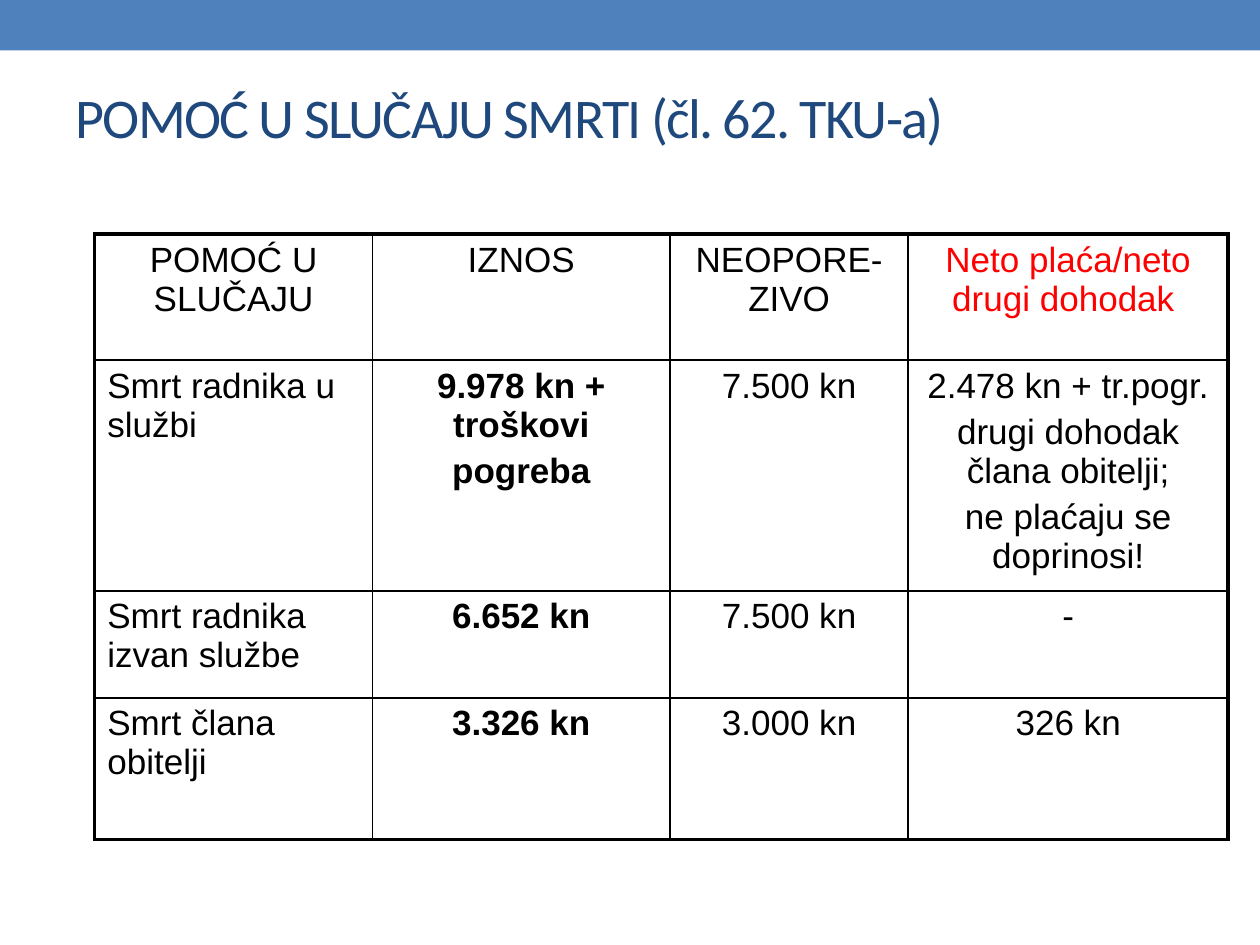
from dataclasses import dataclass

from lxml import etree
from pptx import Presentation
from pptx import util as u
from pptx.dml.color import RGBColor
from pptx.enum import shapes, text
from pptx.oxml import ns


@dataclass(frozen=True)
class Theme:
    band: str = "4F81BD"
    title: str = "1F497D"
    ink: str = "000000"
    accent: str = "FF0000"
    title_font: str = "Calibri"
    table_font: str = "Arial"
    title_size: float = 32
    table_size: float = 20
    space_before: float = 4
    outer_line: float = 2.25
    inner_line: float = 1


class SlideBuilder:
    def __init__(self, page, theme):
        self.page = page
        self.theme = theme

    def band(self, left, top, width, height):
        box = self.page.shapes.add_shape(
            shapes.MSO_SHAPE.RECTANGLE,
            u.Cm(left), u.Cm(top), u.Cm(width), u.Cm(height))
        box.shadow.inherit = False
        box.fill.solid()
        box.fill.fore_color.rgb = RGBColor.from_string(self.theme.band)
        box.line.fill.background()

    def title(self, wording, left, top, width, height):
        box = self.page.shapes.title
        box.left, box.top = u.Cm(left), u.Cm(top)
        box.width, box.height = u.Cm(width), u.Cm(height)
        frame = box.text_frame
        frame.vertical_anchor = text.MSO_ANCHOR.MIDDLE
        frame.text = wording
        para = frame.paragraphs[0]
        para.alignment = text.PP_ALIGN.LEFT
        self.style(para, self.theme.title_font, self.theme.title_size, self.theme.title)
        para.runs[0].font._element.set("spc", "-100")

    def style(self, para, name, size, color, bold=False):
        para.font.name = name
        para.font.size = u.Pt(size)
        para.font.bold = bold
        para.font.color.rgb = RGBColor.from_string(color)

    def table(self, rows, left, top, widths, heights):
        frame = self.page.shapes.add_table(
            len(rows), len(widths), u.Cm(left), u.Cm(top),
            u.Cm(sum(widths)), u.Cm(sum(heights)))
        table = frame.table
        table.first_row = table.horz_banding = False
        for column, width in zip(table.columns, widths):
            column.width = u.Cm(width)
        for row, height in zip(table.rows, heights):
            row.height = u.Cm(height)
        last_row, last_column = len(rows) - 1, len(widths) - 1
        for r, row in enumerate(rows):
            for c, wording in enumerate(row):
                cell = table.cell(r, c)
                edges = {"lnL": c == 0, "lnR": c == last_column,
                         "lnT": r == 0, "lnB": r == last_row}
                self.borders(cell, edges)
                cell.fill.background()
                self.cell_text(cell, wording, centred=r == 0 or c > 0,
                               bold=r > 0 and c == 1,
                               accent=r == 0 and c == last_column)

    def cell_text(self, cell, wording, centred, bold, accent):
        theme = self.theme
        cell.text = wording
        for para in cell.text_frame.paragraphs:
            para.alignment = text.PP_ALIGN.CENTER if centred else text.PP_ALIGN.LEFT
            para.space_before = u.Pt(theme.space_before)
            self.style(para, theme.table_font, theme.table_size,
                       theme.accent if accent else theme.ink, bold)

    def borders(self, cell, edges):
        properties = cell._tc.get_or_add_tcPr()
        for side, outer in edges.items():
            width = self.theme.outer_line if outer else self.theme.inner_line
            line = etree.SubElement(properties, ns.qn(f"a:{side}"), w=str(u.Pt(width)))
            fill = etree.SubElement(line, ns.qn("a:solidFill"))
            etree.SubElement(fill, ns.qn("a:srgbClr"), val=self.theme.ink)


ROWS = [
    ["POMOĆ U SLUČAJU", "IZNOS", "NEOPORE-ZIVO", "Neto plaća/neto drugi dohodak "],
    ["Smrt radnika u službi", "9.978 kn + troškovi\npogreba", "7.500 kn",
     "2.478 kn + tr.pogr.\ndrugi dohodak člana obitelji;\nne plaćaju se doprinosi!"],
    ["Smrt radnika izvan službe", "6.652 kn", "7.500 kn", "-"],
    ["Smrt člana obitelji", "3.326 kn", "3.000 kn", "326 kn"],
]


def main():
    deck = Presentation()
    deck.slide_width, deck.slide_height = u.Cm(25.4), u.Cm(19.05)
    page = deck.slides.add_slide(deck.slide_layouts[5])
    builder = SlideBuilder(page, Theme())
    builder.band(0, 0, 25.4, 1.02)
    builder.title("POMOĆ U SLUČAJU SMRTI (čl. 62. TKU-a)", 1.27, 0.76, 22.86, 3.18)
    builder.table(ROWS, 1.91, 4.72, [5.6, 6, 4.8, 6.45], [2.54, 4.65, 2.16, 2.85])
    deck.save("out.pptx")


if __name__ == "__main__":
    main()
